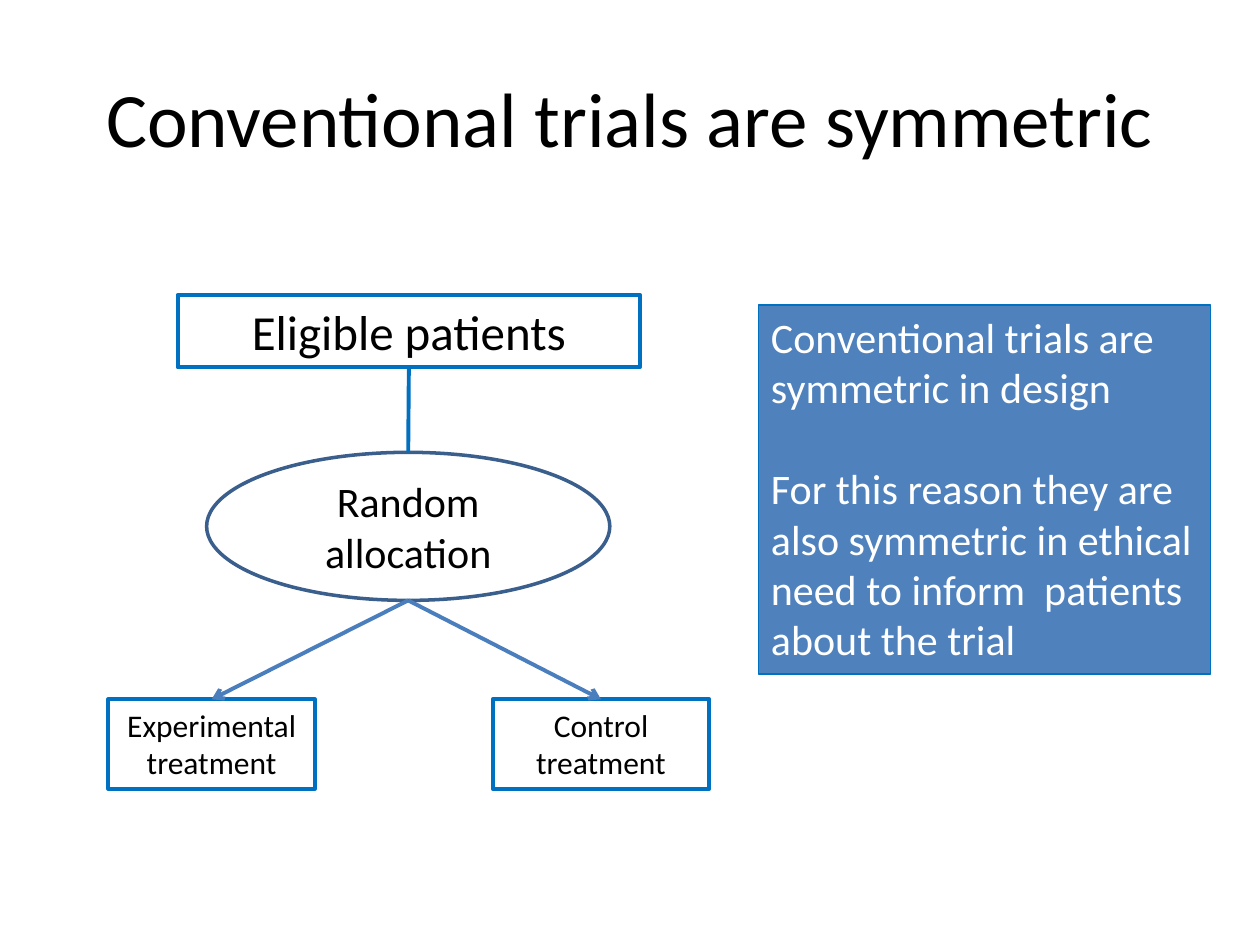
from lxml import etree
from pptx import Presentation
from pptx.dml.color import RGBColor
from pptx.enum.shapes import MSO_CONNECTOR, MSO_SHAPE
from pptx.enum.text import MSO_ANCHOR, MSO_AUTO_SIZE, PP_ALIGN
from pptx.oxml.ns import qn
from pptx.util import Inches, Pt

RECTANGLE, ELLIPSE = MSO_SHAPE.RECTANGLE, MSO_SHAPE.OVAL
STRAIGHT = MSO_CONNECTOR.STRAIGHT
TOP, MIDDLE = MSO_ANCHOR.TOP, MSO_ANCHOR.MIDDLE
LEFT, CENTER = PP_ALIGN.LEFT, PP_ALIGN.CENTER
GROW, FIXED = MSO_AUTO_SIZE.SHAPE_TO_FIT_TEXT, MSO_AUTO_SIZE.NONE
TITLE_ONLY = 5
COLUMNS, ROWS = 100, 75
COLORS = {
    "ink": "000000",
    "paper": "FFFFFF",
    "panel": "4F81BD",
    "frame": "0070C0",
    "oval": "3A5F8C",
    "arrow": "4B7EBC",
}


def write_text(frame, *texts, size, color="ink", align=CENTER, anchor=TOP,
               fit=FIXED, gap=0, font="Calibri"):
    frame.word_wrap = True
    frame.auto_size = fit
    frame.vertical_anchor = anchor
    for index, text in enumerate(texts):
        para = frame.add_paragraph() if index else frame.paragraphs[0]
        para.alignment = align
        para.space_before = Pt(gap if index else 0)
        span = para.add_run()
        span.text = text
        span.font.name = font
        span.font.size = Pt(size)
        span.font.color.rgb = RGBColor.from_string(COLORS[color])


class TrialSlide:
    def __init__(self, deck):
        self.page = deck.slides.add_slide(deck.slide_layouts[TITLE_ONLY])
        self.column = deck.slide_width / COLUMNS
        self.row = deck.slide_height / ROWS

    def measure(self, left, top, width, height):
        return (round(left * self.column), round(top * self.row),
                round(width * self.column), round(height * self.row))

    def title(self, text, place):
        box = self.page.shapes.title
        box.left, box.top, box.width, box.height = self.measure(*place)
        write_text(box.text_frame, text, size=44, anchor=MIDDLE)

    def box(self, *texts, place, kind=RECTANGLE, fill=None, line="frame",
            weight=2.25, fit=GROW, **format):
        box = self.page.shapes.add_shape(kind, *self.measure(*place))
        box.shadow.inherit = False
        if fill:
            box.fill.solid()
            box.fill.fore_color.rgb = RGBColor.from_string(COLORS[fill])
        else:
            box.fill.background()
        box.line.color.rgb = RGBColor.from_string(COLORS[line])
        box.line.width = Pt(weight)
        write_text(box.text_frame, *texts, fit=fit, **format)
        return box

    def link(self, upper, lower, color="frame", arrow=False):
        link = self.page.shapes.add_connector(
            STRAIGHT,
            upper.left + upper.width // 2, upper.top + upper.height,
            lower.left + lower.width // 2, lower.top)
        link.line.color.rgb = RGBColor.from_string(COLORS[color])
        link.line.width = Pt(2.25)
        if arrow:
            etree.SubElement(link.line._get_or_add_ln(), qn("a:tailEnd"),
                             type="arrow")
        etree.SubElement(link._element.spPr, qn("a:effectLst"))


def main():
    deck = Presentation()
    deck.slide_width, deck.slide_height = Inches(10), Inches(7.5)
    slide = TrialSlide(deck)

    slide.title("Conventional trials are symmetric", (5, 3, 90, 12.5))
    allocation = slide.box("Random allocation", place=(16.4, 35.9, 32, 11.75),
                           kind=ELLIPSE, line="oval", weight=2, fit=FIXED,
                           size=24, anchor=MIDDLE)
    patients = slide.box("Eligible patients", place=(14.1, 23.4, 36.7, 5.75),
                         size=28)
    arms = [
        slide.box(f"{name} treatment", place=(left, 55.5, width, 7.1), size=18)
        for name, left, width in (("Experimental", 8.6, 16.4),
                                  ("Control", 39.1, 17.2))
    ]
    slide.link(patients, allocation)
    for arm in arms:
        slide.link(allocation, arm, color="arrow", arrow=True)
    slide.box("Conventional trials are symmetric in design",
              "For this reason they are also symmetric in ethical need to "
              "inform  patients about the trial",
              place=(60.2, 24.2, 35.9, 29.3), fill="panel", weight=0.75,
              size=24, color="paper", align=LEFT, gap=29)

    deck.save("out.pptx")


if __name__ == "__main__":
    main()
